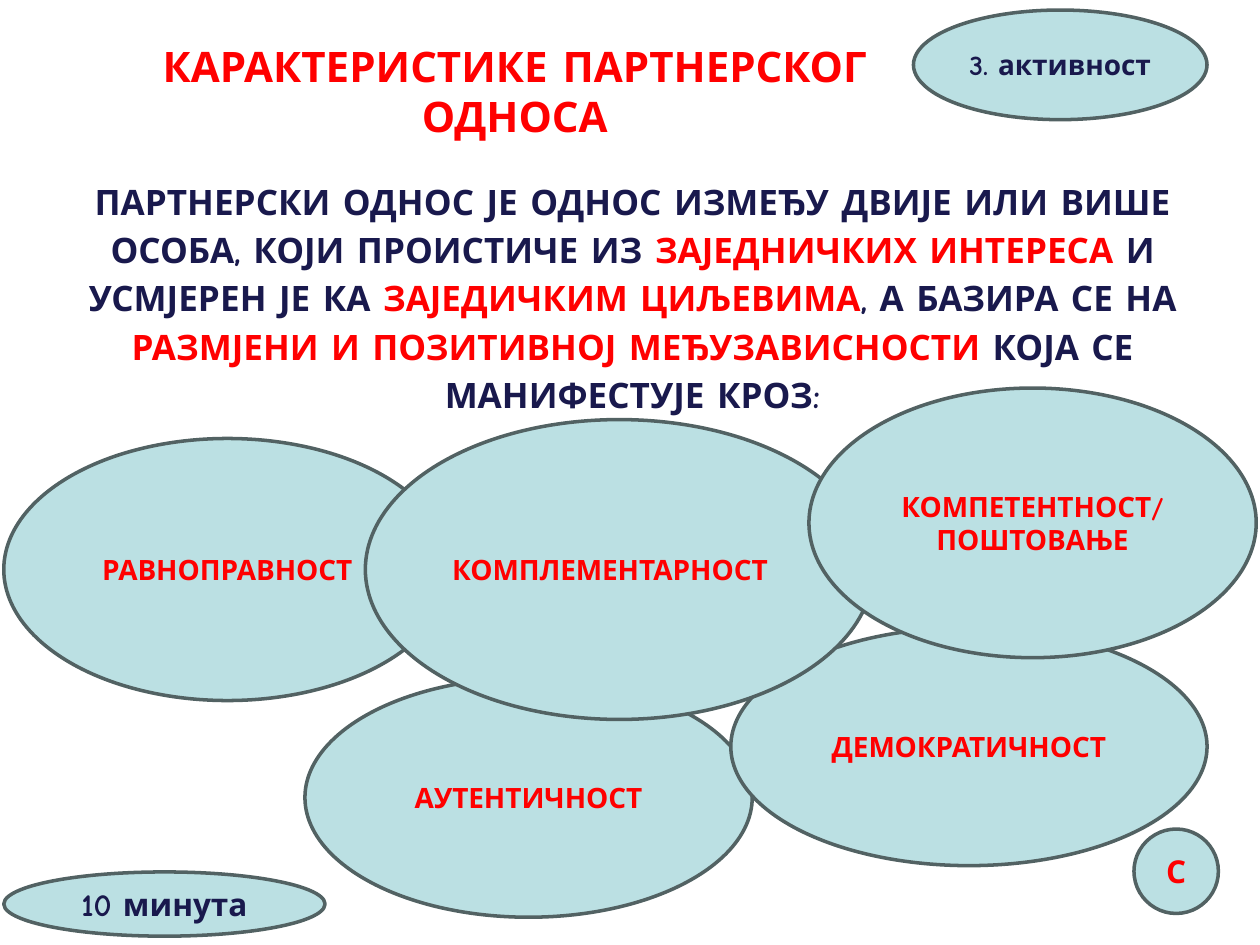
from pptx import Presentation
from pptx.dml.color import RGBColor
from pptx.enum.shapes import MSO_SHAPE
from pptx.enum.text import MSO_ANCHOR, PP_ALIGN
from pptx.util import Inches, Pt

RED = RGBColor(0xFF, 0x00, 0x00)
NAVY = RGBColor(0x19, 0x19, 0x4D)
PALE_BLUE = RGBColor(0xBB, 0xE0, 0xE3)
SLATE = RGBColor(0x52, 0x62, 0x63)

BOLD_FONT = {"name": "Comic Neue", "bold": True}
DEFINITION_SPACING = {"line_spacing": 1.15, "space_after": Pt(10)}
TEXT_FRAME = {"word_wrap": True, "vertical_anchor": MSO_ANCHOR.TOP}
OVAL_FRAME = {"word_wrap": True, "vertical_anchor": MSO_ANCHOR.MIDDLE}
BADGE_FRAME = {"word_wrap": False, "vertical_anchor": MSO_ANCHOR.MIDDLE}

TITLE = [("КАРАКТЕРИСТИКЕ ПАРТНЕРСКОГ ОДНОСА", RED)]
DEFINITION = [
    ("ПАРТНЕРСКИ ОДНОС ЈЕ ОДНОС ИЗМЕЂУ ДВИЈЕ ИЛИ ВИШЕ ОСОБА, КОЈИ ПРОИСТИЧЕ ИЗ ", NAVY),
    ("ЗАЈЕДНИЧКИХ ИНТЕРЕСА ", RED),
    ("И УСМЈЕРЕН ЈЕ КА ", NAVY),
    ("ЗАЈЕДИЧКИМ ЦИЉЕВИМА", RED),
    (", А БАЗИРА СЕ НА ", NAVY),
    ("РАЗМЈЕНИ И ПОЗИТИВНОЈ МЕЂУЗАВИСНОСТИ ", RED),
    ("КОЈА СЕ МАНИФЕСТУЈЕ КРОЗ:", NAVY),
]
TRAITS = [
    (["РАВНОПРАВНОСТ"], (0, 0.4, 3.55, 2.08), PP_ALIGN.CENTER),
    (["АУТЕНТИЧНОСТ"], (2.39, 2.3, 3.55, 1.9), PP_ALIGN.CENTER),
    (["ДЕМОКРАТИЧНОСТ"], (5.77, 1.9, 3.78, 1.89), PP_ALIGN.CENTER),
    (["КОМПЛЕМЕНТАРНОСТ"], (2.87, 0.25, 4.03, 2.38), PP_ALIGN.JUSTIFY),
    (["КОМПЕТЕНТНОСТ/", "ПОШТОВАЊЕ"], (6.39, 0, 3.55, 2.14), PP_ALIGN.CENTER),
]


def apply_format(target, values):
    for attribute, value in values.items():
        setattr(target, attribute, value)


def write_paragraph(paragraph, phrases, size, align=PP_ALIGN.CENTER):
    paragraph.alignment = align
    for phrase, color in phrases:
        run = paragraph.add_run()
        run.text = phrase
        apply_format(run.font, BOLD_FONT | {"size": Pt(size)})
        run.font.color.rgb = color


def add_text(slide, box, phrases, size, spacing):
    frame = slide.shapes.add_textbox(*map(Inches, box)).text_frame
    apply_format(frame, TEXT_FRAME)
    paragraph = frame.paragraphs[0]
    write_paragraph(paragraph, phrases, size)
    apply_format(paragraph, spacing)


def add_oval(slide, box, lines, size, color, align=PP_ALIGN.CENTER, frame_format=OVAL_FRAME):
    oval = slide.shapes.add_shape(MSO_SHAPE.OVAL, *map(Inches, box))
    oval.shadow.inherit = False
    oval.fill.solid()
    oval.fill.fore_color.rgb = PALE_BLUE
    oval.line.color.rgb = SLATE
    oval.line.width = Pt(2)
    frame = oval.text_frame
    apply_format(frame, frame_format)
    for index, line in enumerate(lines):
        paragraph = frame.add_paragraph() if index else frame.paragraphs[0]
        write_paragraph(paragraph, [(line, color)], size, align)


def add_trait_cluster(slide, left, top):
    for lines, (dx, dy, width, height), align in TRAITS:
        add_oval(slide, (left + dx, top + dy, width, height), lines, 16, RED, align)


def add_badge(slide, box, label, size, color):
    add_oval(slide, box, [label], size, color, frame_format=BADGE_FRAME)


def main():
    presentation = Presentation()
    apply_format(presentation, {"slide_width": Inches(10), "slide_height": Inches(7.5)})
    slide = presentation.slides.add_slide(presentation.slide_layouts[6])
    add_text(slide, (0.26, 1.33, 9.52, 5.71), DEFINITION, 20, DEFINITION_SPACING)
    add_text(slide, (0.5, 0.27, 7.17, 1.72), TITLE, 24, {})
    add_badge(slide, (9, 6.58, 0.67, 0.67), "С", 18, RED)
    add_trait_cluster(slide, 0.03, 3.08)
    add_badge(slide, (0.03, 6.92, 2.55, 0.51), "10 минута", 18, NAVY)
    add_badge(slide, (7.25, 0.08, 2.33, 0.87), "3. активност", 16, NAVY)
    presentation.save("out.pptx")


if __name__ == "__main__":
    main()
